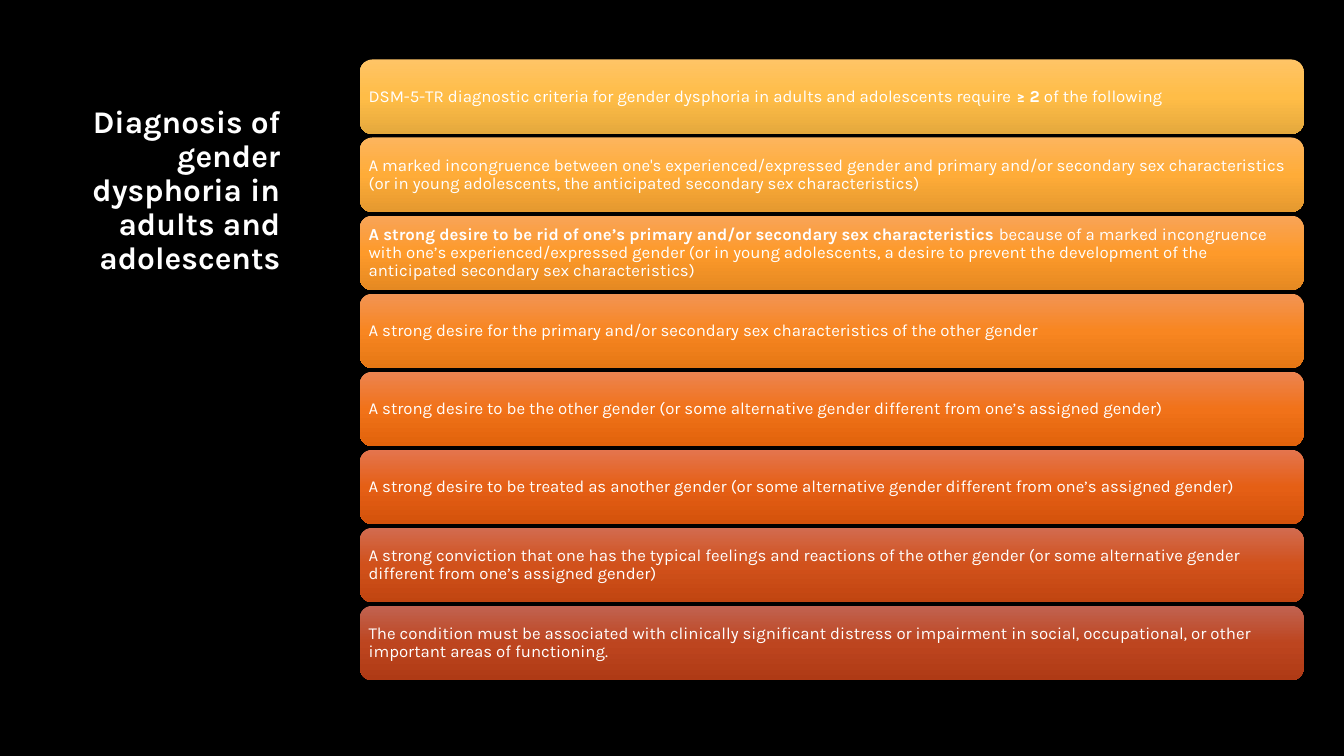
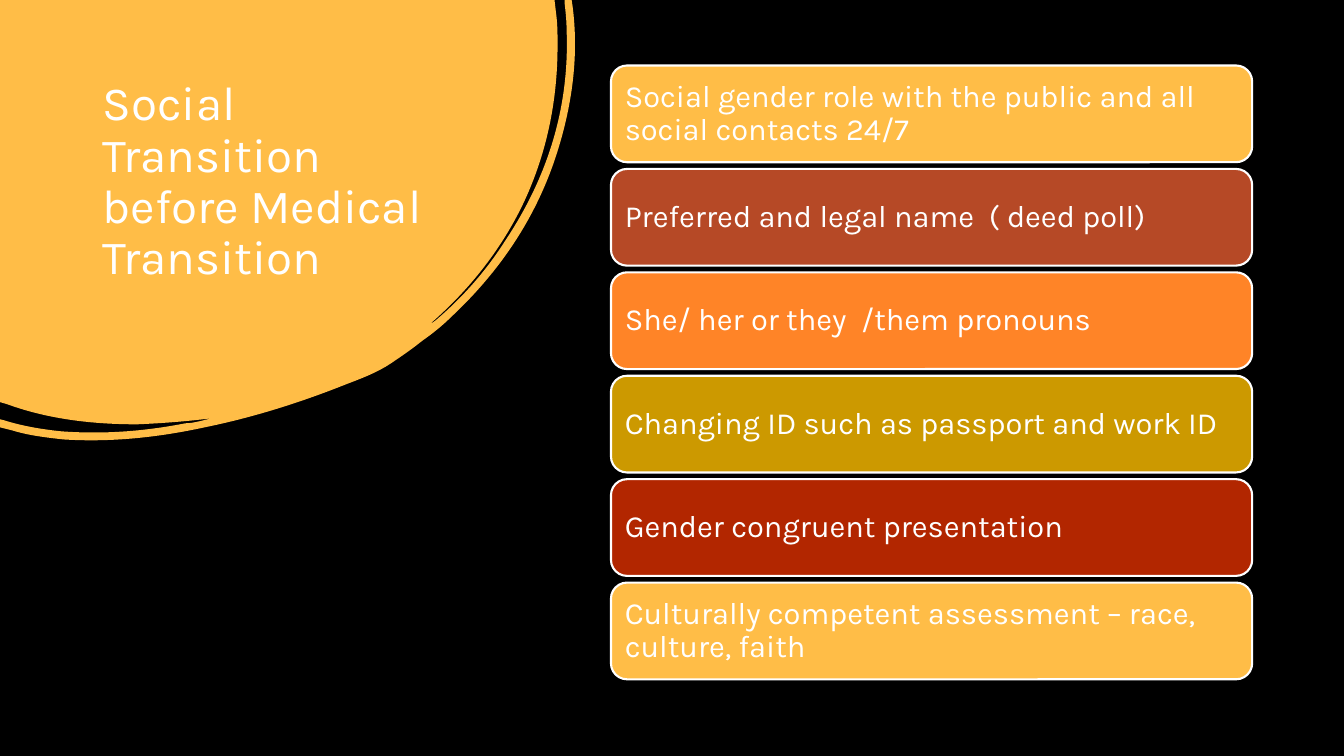
import copy
import dataclasses

import lxml.etree
import pptx
import pptx.dml.color
import pptx.enum.shapes
import pptx.enum.text
import pptx.oxml.ns
import pptx.util

PX = 9144  # one px is a hundredth of an inch
SHAPE = pptx.enum.shapes.MSO_SHAPE
ANCHOR = pptx.enum.text.MSO_ANCHOR
ALIGN = pptx.enum.text.PP_ALIGN


@dataclasses.dataclass(frozen=True)
class Theme:
    font: str = "Karla"
    back: str = "000000"
    text: str = "FFFFFF"
    gold: str = "FFBD47"
    rust: str = "B64926"
    orange: str = "FF8427"
    olive: str = "CC9900"
    red: str = "B22600"
    head: float = 22.5
    title: float = 34
    small: float = 12
    large: float = 22
    leading: float = 0.9
    border: float = 1.5


THEME = Theme()

# Each criterion has its gradient; text between bars "|" is bold
CRITERIA = [
    ("DSM-5-TR diagnostic criteria for gender dysphoria in adults and adolescents "
     "require| ≥ 2 |of the following", ("FFC466", "FFBD47", "E5A93D")),
    ("A marked incongruence between one's experienced/expressed gender and primary "
     "and/or secondary sex characteristics (or in young adolescents, the anticipated "
     "secondary sex characteristics)", ("FDB55D", "FFAC38", "E5992F")),
    ("|A strong desire to be rid of one’s primary and/or secondary sex characteristics "
     "|because of a marked incongruence with one’s experienced/expressed gender (or in "
     "young adolescents, a desire to prevent the development of the anticipated "
     "secondary sex characteristics)", ("F8A458", "FE9A2A", "E58922")),
    ("A strong desire for the primary and/or secondary sex characteristics of the "
     "other gender", ("F29454", "F88621", "E57714")),
    ("A strong desire to be the other gender (or some alternative gender different "
     "from one’s assigned gender)", ("EC8451", "F17219", "E1630B")),
    ("A strong desire to be treated as another gender (or some alternative gender "
     "different from one’s assigned gender)", ("E4754E", "E55F15", "D4520B")),
    ("A strong conviction that one has the typical feelings and reactions of the other "
     "gender (or some alternative gender different from one’s assigned gender)",
     ("D26B4F", "D1511B", "C14510")),
    ("The condition must be associated with clinically significant distress or "
     "impairment in social, occupational, or other important areas of functioning.",
     ("C16351", "BD451F", "AF3A15")),
]

CHANGES = [
    ("Social gender role with the public and all social contacts 24/7", THEME.gold),
    ("Preferred and legal name  ( deed poll)", THEME.rust),
    ("She/ her or they  /them pronouns", THEME.orange),
    ("Changing ID such as passport and work ID", THEME.olive),
    ("Gender congruent presentation", THEME.red),
    ("Culturally competent assessment – race, culture, faith", THEME.gold),
]

# Outline of the corner blob: two numbers are a line, six are a curve
BLOB = [
    (550, 0), (552, 17),
    (553, 26, 553, 36, 553, 45), (553, 101, 542, 154, 518, 204),
    (496, 249, 465, 288, 427, 321), (429, 321, 430, 319, 432, 318),
    (459, 295, 482, 269, 501, 239), (543, 176, 565, 107, 562, 30),
    (562, 21, 561, 12, 560, 3), (560, 0), (567, 0), (568, 7),
    (574, 54, 568, 102, 553, 150), (533, 214, 497, 268, 448, 314),
    (439, 323, 429, 331, 419, 338), (409, 346, 399, 353, 387, 361),
    (375, 369, 360, 375, 344, 381), (299, 399, 252, 414, 203, 424),
    (157, 434, 110, 439, 63, 436), (45, 434, 28, 432, 12, 427),
    (0, 424), (0, 416), (4, 417),
    (23, 423, 42, 426, 61, 428), (103, 431, 143, 428, 184, 420),
    (189, 420, 193, 419, 198, 418), (202, 417, 206, 416, 210, 415),
    (186, 418, 161, 420, 136, 421), (92, 421, 48, 416, 7, 401),
    (0, 399),
]


def emu(*sizes):
    return [pptx.util.Emu(round(size * PX)) for size in sizes]


def rgb(code):
    return pptx.dml.color.RGBColor.from_string(code)


def paint(fill, code):
    fill.solid()
    fill.fore_color.rgb = rgb(code)


def blend(shape, codes):
    """Fill from top to bottom with evenly spaced colours."""
    fill = shape.fill
    fill.gradient()
    fill.gradient_angle = 270
    stops = shape._element.spPr.find(".//" + pptx.oxml.ns.qn("a:gsLst"))
    while len(stops) < len(codes):
        stops.append(copy.deepcopy(stops[0]))
    for i, (stop, code) in enumerate(zip(fill.gradient_stops, codes)):
        stop.color.rgb = rgb(code)
        stop.position = i / (len(codes) - 1)


def write(shape, text, size, anchor, pads, align=ALIGN.LEFT, bold=False):
    frame = shape.text_frame
    frame.word_wrap = True
    frame.vertical_anchor = anchor
    (frame.margin_left, frame.margin_top,
     frame.margin_right, frame.margin_bottom) = emu(*pads)
    para = frame.paragraphs[0]
    para.alignment = align
    para.line_spacing = THEME.leading
    for i, part in enumerate(text.split("|")):
        if not part:
            continue
        run = para.add_run()
        run.text = part
        run.font.name = THEME.font
        run.font.size = pptx.util.Pt(size)
        run.font.bold = bold or i % 2 == 1
        run.font.color.rgb = rgb(THEME.text)


def add_slide(deck):
    slide = deck.slides.add_slide(deck.slide_layouts[6])
    paint(slide.background.fill, THEME.back)
    return slide


def add_title(slide, text, box, size, anchor, **style):
    shape = slide.shapes.add_textbox(*emu(*box))
    write(shape, text, size, anchor, (10, 5, 10, 5), **style)


def add_bar(slide, text, box, size, pad):
    bar = slide.shapes.add_shape(SHAPE.ROUNDED_RECTANGLE, *emu(*box))
    bar.shadow.inherit = False
    write(bar, text, size, ANCHOR.MIDDLE, [pad] * 4)
    return bar


def add_stack(slide, rows, box, last, size, pad):
    """Stack equal bars from the top of box down to last; yield bar and colour."""
    left, top, width, height = box
    pitch = (last - top) / (len(rows) - 1)
    for i, (text, tone) in enumerate(rows):
        place = (left, top + i * pitch, width, height)
        yield add_bar(slide, text, place, size, pad), tone


def bend(shape, parts):
    """Turn the line pieces that stand for curves into real curves."""
    qn = pptx.oxml.ns.qn
    lines = list(shape._element.spPr.iter(qn("a:lnTo")))
    for line, part in zip(lines, parts):
        if len(part) == 6:
            line.tag = qn("a:cubicBezTo")
            line[:] = []
            for x, y in zip(part[::2], part[1::2]):
                across, down = emu(x, y)
                lxml.etree.SubElement(line, qn("a:pt"), x=str(across), y=str(down))


def add_blob(slide):
    pen = slide.shapes.build_freeform(0, 0, scale=1.0)
    pen.add_line_segments([emu(*part[-2:]) for part in BLOB], close=True)
    blob = pen.convert_to_shape()
    bend(blob, BLOB)
    blob.shadow.inherit = False
    paint(blob.fill, THEME.gold)
    blob.line.fill.background()


def add_diagnosis(deck):
    slide = add_slide(deck)
    add_title(slide, "Diagnosis of gender dysphoria in adults and adolescents",
              (64, 99, 224, 180), THEME.head, ANCHOR.BOTTOM,
              align=ALIGN.RIGHT, bold=True)
    stack = add_stack(slide, CRITERIA, (357, 59, 936, 74), 601, THEME.small, 5)
    for bar, tones in stack:
        blend(bar, tones)
        bar.line.fill.background()


def add_social(deck):
    slide = add_slide(deck)
    add_blob(slide)
    add_title(slide, "Social Transition before Medical Transition",
              (92, 74, 352, 222), THEME.title, ANCHOR.TOP)
    stack = add_stack(slide, CHANGES, (606, 65, 636, 96), 578, THEME.large, 9)
    for bar, tone in stack:
        paint(bar.fill, tone)
        paint(bar.line.fill, THEME.text)
        bar.line.width = pptx.util.Pt(THEME.border)


def main():
    deck = pptx.Presentation()
    deck.slide_width, deck.slide_height = emu(1333, 750)
    add_diagnosis(deck)
    add_social(deck)
    deck.save("out.pptx")


if __name__ == "__main__":
    main()
